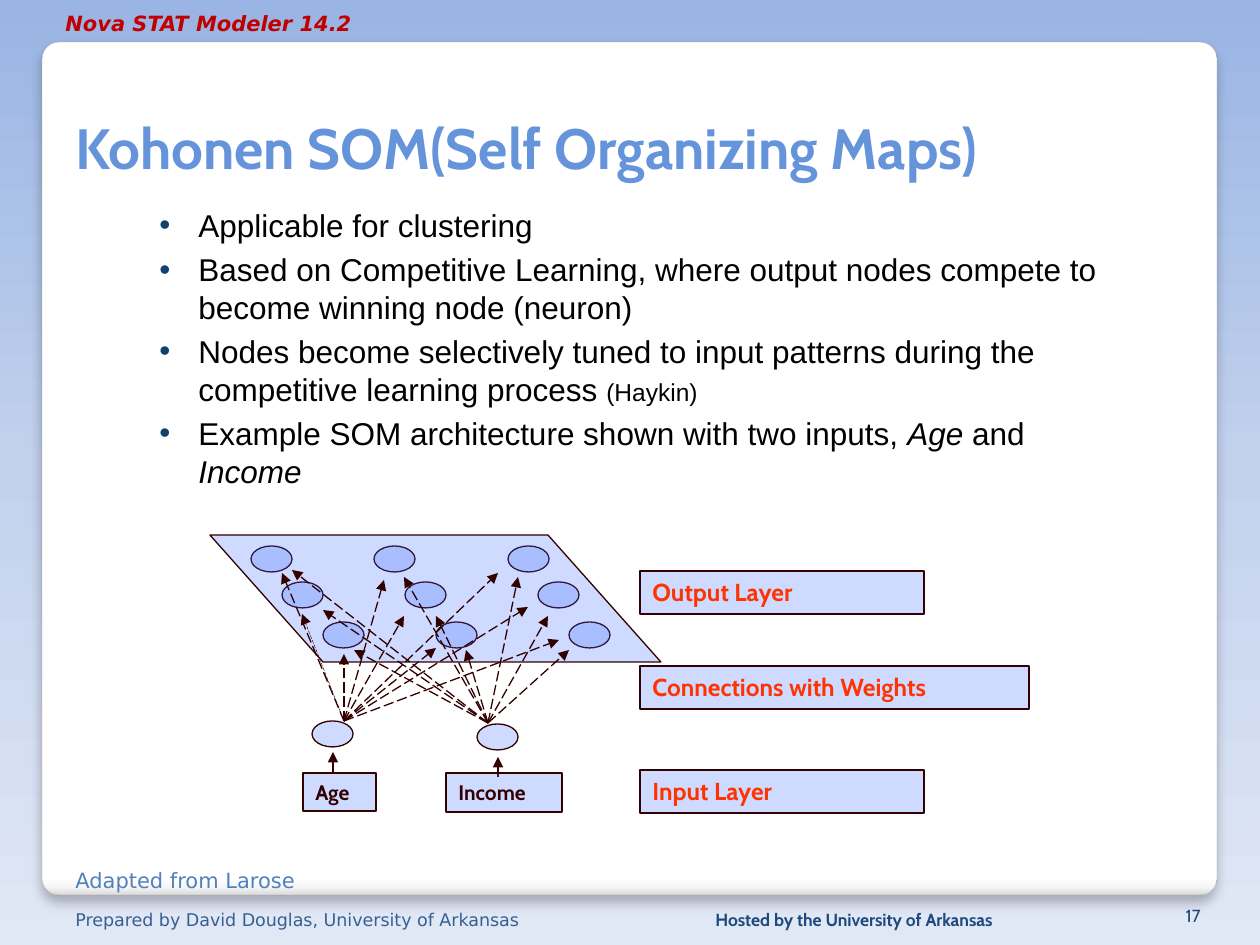
"""Build a slide on Kohonen self organizing maps with a network diagram."""
import lxml.etree
import pptx
import pptx.dml.color
import pptx.enum.dml
import pptx.enum.shapes
import pptx.enum.text
import pptx.oxml.ns
import pptx.util

RGB = pptx.dml.color.RGBColor
SHAPE = pptx.enum.shapes.MSO_SHAPE
ANCHOR = pptx.enum.text.MSO_ANCHOR
ALIGN = pptx.enum.text.PP_ALIGN
Pt = pptx.util.Pt
qn = pptx.oxml.ns.qn
SubElement = lxml.etree.SubElement
PX = 914400 / 126

BLUE = RGB(0x33, 0x66, 0xFF)
MAROON = RGB(0x33, 0x00, 0x00)
ORANGE = RGB(0xFF, 0x33, 0x00)
NAVY = RGB(0x1F, 0x49, 0x7D)
TITLE_BLUE = RGB(0x65, 0x94, 0xDA)
SOURCE_BLUE = RGB(0x4F, 0x81, 0xBD)
AUTHOR_BLUE = RGB(0x37, 0x60, 0x92)
RED = RGB(0xC0, 0x00, 0x00)
BLACK = RGB(0x00, 0x00, 0x00)
BULLET = RGB(0x10, 0x42, 0x70)
GRAY = RGB(0xA4, 0xA4, 0xA4)
SKY = [(0, RGB(0x9A, 0xB5, 0xE4)), (50, RGB(0xC2, 0xD1, 0xED)), (100, RGB(0xE1, 0xE8, 0xF5))]
PAPER = [(0, RGB(0xFF, 0xFF, 0xFF)), (98, RGB(0xFF, 0xFF, 0xFF)),
         (99, RGB(0xF7, 0xF7, 0xF7)), (100, RGB(0xDA, 0xDA, 0xDA))]

prs = pptx.Presentation()
prs.slide_width, prs.slide_height = round(1260 * PX), round(945 * PX)
s = prs.slides.add_slide(prs.slide_layouts[6])


def add_tinted(kind, *box):
    sp = s.shapes.add_shape(kind, *[round(n * PX) for n in box])
    sp.shadow.inherit = False
    sp.fill.solid()
    sp.fill.fore_color.rgb = BLUE
    color = sp.element.spPr.find(qn("a:solidFill"))[0]
    SubElement(color, qn("a:alpha"), val="24000")
    sp.line.color.rgb = MAROON
    sp.line.width = Pt(0.75)
    return sp


def set_text(sp, text, size, font, color, bold=False):
    tf = sp.text_frame
    tf.word_wrap = True
    p = tf.paragraphs[0]
    p.text = text
    p.alignment = ALIGN.LEFT
    p.font.size, p.font.name, p.font.bold = Pt(size), font, bold
    p.font.color.rgb = color
    return tf


panel = s.shapes.add_shape(SHAPE.ROUNDED_RECTANGLE, *[round(n * PX) for n in (42, 42, 1175, 853)])
panel.adjustments[0] = 0.02
panel.line.color.rgb = GRAY
panel.line.width = Pt(0.16)
panel.shadow.inherit = False
shadow = SubElement(panel.element.spPr.find(qn("a:effectLst")), qn("a:outerShdw"),
                    blurRad=str(Pt(6)), dist=str(Pt(4)), dir="5400000", rotWithShape="0")
SubElement(SubElement(shadow, qn("a:srgbClr"), val=str(BLACK)), qn("a:alpha"), val="25000")

for fill, owner, stops in [(s.background.fill, s.element, SKY), (panel.fill, panel.element, PAPER)]:
    fill.gradient()
    fill.gradient_angle = 270
    gs_list = owner.xpath(".//a:gsLst")[0]
    for old in list(gs_list):
        gs_list.remove(old)
    for pos, color in stops:
        stop = SubElement(gs_list, qn("a:gs"), pos=str(pos * 1000))
        SubElement(stop, qn("a:srgbClr"), val=str(color))

captions = [
    ((53, 4, 360, 38), "Nova STAT Modeler 14.2", 12, "DejaVu Sans", RED, True),
    ((63, 42, 1128, 145), "Kohonen SOM(Self Organizing Maps)", 32.4, "Cabin", TITLE_BLUE, True),
    ((703, 903, 431, 29), "Hosted by the University of Arkansas", 10, "Cabin", NAVY, True),
    ((1150, 903, 63, 29), "17", 10, "Cabin", NAVY, False),
    ((63, 861, 357, 38), "Adapted from Larose", 12, "DejaVu Sans", SOURCE_BLUE, False),
    ((63, 903, 562, 29), "Prepared by David Douglas, University of Arkansas", 10, "DejaVu Sans", AUTHOR_BLUE, False),
]
frames = [set_text(s.shapes.add_textbox(*[round(n * PX) for n in box]), *style)
          for box, *style in captions]
product, title, host, number, source, author = frames
product.paragraphs[0].font.italic = True
title.vertical_anchor = number.vertical_anchor = ANCHOR.BOTTOM
number.paragraphs[0].alignment = ALIGN.RIGHT

output_rows = [(546, (251, 374, 508)), (582, (282, 405, 538)), (622, (323, 436, 569))]
input_nodes = [(721, (312,)), (724, (477,))]
for top, lefts in output_rows + input_nodes:
    for left in lefts:
        add_tinted(SHAPE.OVAL, left, top, 41, 26)

plane = add_tinted(SHAPE.PARALLELOGRAM, 210, 535, 451, 127)
plane.adjustments[0] = 0.89
plane.element.spPr.find(qn("a:xfrm")).set("flipH", "1")

DASH = pptx.enum.dml.MSO_LINE.LONG_DASH
arrows = [
    ((344, 721), [(344, 654), (384, 580), (404, 616), (436, 648), (498, 573),
                  (528, 607), (559, 640), (282, 573)], 0.75, DASH),
    ((344, 721), [(302, 614)], 0.25, DASH),
    ((488, 723), [(354, 650), (323, 610), (292, 570), (466, 650), (436, 616),
                  (404, 577), (518, 577), (548, 616), (569, 650)], 0.75, DASH),
    ((333, 772), [(333, 752)], 0.75, None),
    ((498, 777), [(498, 757)], 0.75, None),
]
for start, ends, width, dash in arrows:
    for end in ends:
        arrow = s.shapes.add_connector(pptx.enum.shapes.MSO_CONNECTOR.STRAIGHT,
                                       *[round(n * PX) for n in start + end])
        arrow.line.color.rgb = MAROON
        arrow.line.width = Pt(width)
        arrow.line.dash_style = dash
        SubElement(arrow.element.spPr.find(qn("a:ln")), qn("a:tailEnd"), type="triangle")
        SubElement(arrow.element.spPr, qn("a:effectLst"))

labels = [
    ((303, 773, 73, 38), "Age", 12, MAROON),
    ((446, 773, 116, 39), "Income", 12, MAROON),
    ((640, 571, 284, 43), "Output Layer", 14, ORANGE),
    ((640, 770, 284, 43), "Input Layer", 14, ORANGE),
    ((640, 666, 389, 43), "Connections with Weights", 14, ORANGE),
]
for box, text, size, color in labels:
    tf = set_text(add_tinted(SHAPE.RECTANGLE, *box), text, size, "Cabin", color, True)
    tf.vertical_anchor = ANCHOR.TOP

bullets = [
    [("Applicable for clustering", 18, False)],
    [("Based on Competitive Learning, where output nodes compete to become winning node (neuron)", 18, False)],
    [("Nodes become selectively tuned to input patterns during the competitive learning process ", 18, False),
     ("(Haykin)", 14, False)],
    [("Example SOM architecture shown with two inputs, ", 18, False), ("Age", 18, True),
     (" and ", 18, False), ("Income", 18, True)],
]
tf = s.shapes.add_textbox(*[round(n * PX) for n in (84, 200, 1050, 305)]).text_frame
tf.word_wrap = True
for i, runs in enumerate(bullets):
    p = tf.add_paragraph() if i else tf.paragraphs[0]
    p.level = 1
    p.space_before = Pt(3.6)
    p.font.name = "Arial"
    p.font.size = Pt(18)
    p.font.color.rgb = BLACK
    pPr = p._p.get_or_add_pPr()
    pPr.set("marL", str(round(102 * PX)))
    pPr.set("indent", str(round(-39 * PX)))
    bullet_color = lxml.etree.Element(qn("a:buClr"))
    SubElement(bullet_color, qn("a:srgbClr"), val=str(BULLET))
    bullet_font = lxml.etree.Element(qn("a:buFont"), typeface="Arial")
    bullet_char = lxml.etree.Element(qn("a:buChar"), char="•")
    for mark in (bullet_color, bullet_font, bullet_char):
        pPr.find(qn("a:defRPr")).addprevious(mark)
    for text, size, italic in runs:
        r = p.add_run()
        r.text = text
        if size != 18:
            r.font.size = Pt(size)
        if italic:
            r.font.italic = True

prs.save("out.pptx")
